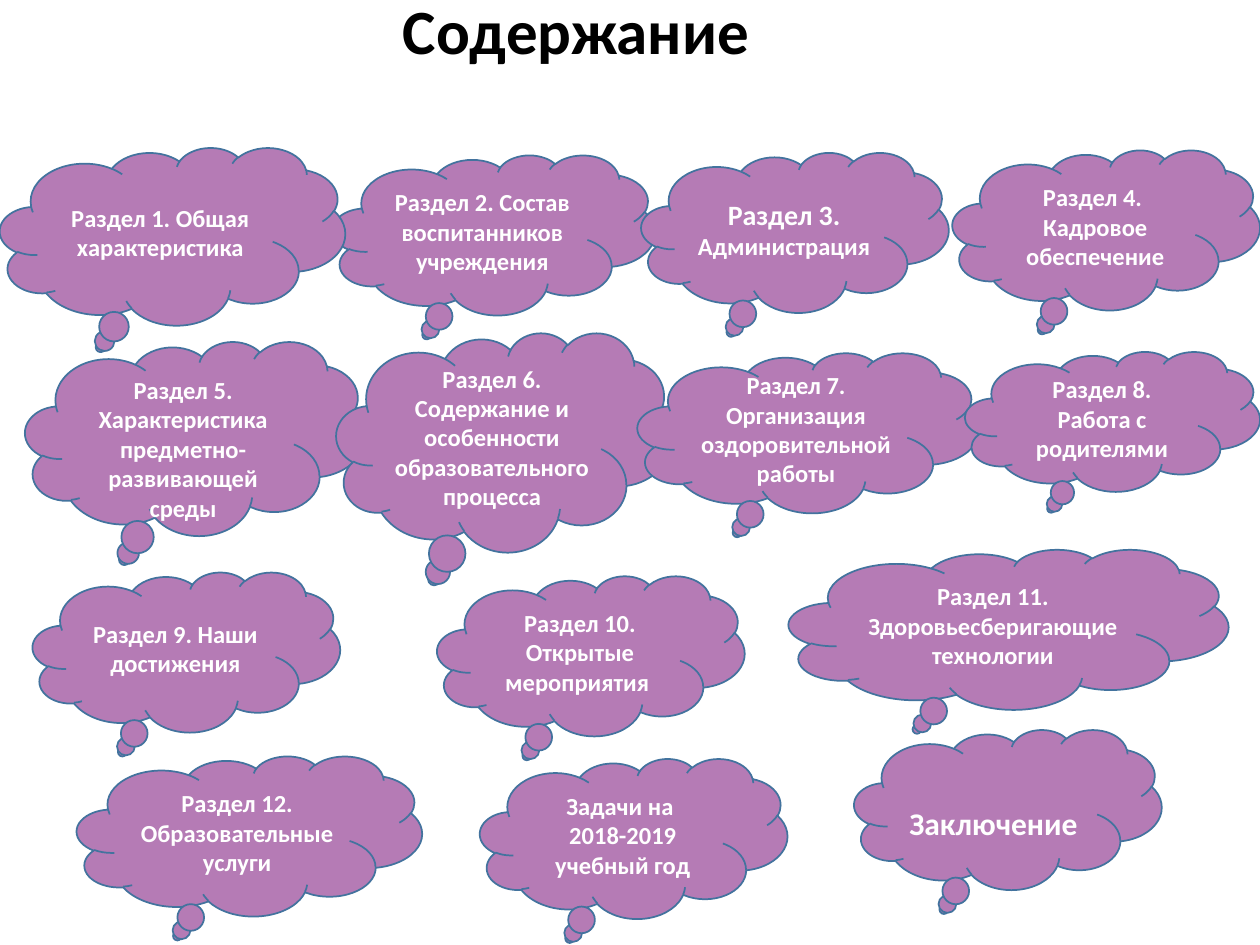
from dataclasses import dataclass

from pptx import Presentation
from pptx.dml.color import RGBColor
from pptx.enum.shapes import MSO_SHAPE
from pptx.enum.text import MSO_ANCHOR, PP_ALIGN
from pptx.util import Inches, Pt


@dataclass(frozen=True)
class Theme:
    font: str = "Calibri"
    cloud: RGBColor = RGBColor(0xB5, 0x7B, 0xB5)
    edge: RGBColor = RGBColor(0x43, 0x73, 0x9E)
    dark: RGBColor = RGBColor(0, 0, 0)
    light: RGBColor = RGBColor(255, 255, 255)
    title: int = 36
    large: int = 18
    medium: int = 16
    body: int = 14


THEME = Theme()


@dataclass(frozen=True)
class Cloud:
    """A thought cloud; lines hold paragraphs, each a list of (text, size) runs."""
    left: float
    top: float
    lines: list
    width: float = 2.44
    height: float = 1.27
    drop: float = 0  # extra inset that lowers the text
    side: float = 0.1  # left and right inset


def plain(*texts: str, size: int = THEME.body) -> list:
    return [[(text, size)] for text in texts]


# Back to front: neighbours overlap.
CLOUDS = [
    Cloud(2.64, 1.23, plain("Раздел 2. Состав воспитанников учреждения"), width=2.56),
    Cloud(0, 1.17, plain("Раздел 1. Общая характеристика"), 2.74, 1.41),
    Cloud(5.09, 1.21, [[("Раздел 3. ", THEME.medium), ("Администрация ", THEME.body)]]),
    Cloud(0.2, 2.71, plain("Раздел 5. Характеристика предметно-развивающей среды"),
          2.7, 1.54, drop=0.23),
    Cloud(6.26, 4.36, plain("Раздел 11. Здоровьесберигающие технологии"), width=3.49),
    Cloud(2.67, 2.64, plain("Раздел 6. Содержание и особенности образовательного процесса"),
          2.66, 1.74, side=0.05),
    Cloud(5.06, 2.8, plain("Раздел 7. Организация оздоровительной работы"), width=2.71),
    Cloud(7.66, 2.79, plain("Раздел 8. Работа с родителями"), 2.34, 1.11),
    Cloud(0.26, 4.54, plain("Раздел 9. Наши достижения")),
    Cloud(3.47, 4.57, plain("Раздел 10. Открытые мероприятия ")),
    Cloud(0.61, 6, plain("Раздел 12. Образовательные услуги"), width=2.74),
    Cloud(7.56, 1.19, plain("Раздел 4. ", "Кадровое обеспечение")),
    Cloud(3.81, 6.02, plain("Задачи на ", "2018-2019 учебный год")),
    Cloud(6.78, 5.79, plain("Заключение ", size=THEME.large), drop=0.27),
]


def write(shape, lines: list, *, color: RGBColor, drop: float = 0,
          lift: float = 0, side: float = 0.1, spacing: float = 1.0) -> None:
    """Fill a shape with centred bold text; drop and lift shift it by insets."""
    frame = shape.text_frame
    frame.word_wrap = True
    frame.vertical_anchor = MSO_ANCHOR.MIDDLE
    frame.margin_left = frame.margin_right = Inches(side)
    frame.margin_top = Inches(0.05 + drop)
    frame.margin_bottom = Inches(0.05 + lift)
    for i, runs in enumerate(lines):
        para = frame.add_paragraph() if i else frame.paragraphs[0]
        para.alignment = PP_ALIGN.CENTER
        para.line_spacing = spacing
        for text, size in runs:
            run = para.add_run()
            run.text = text
            font = run.font
            font.name, font.size, font.bold = THEME.font, Pt(size), True
            font.color.rgb = color


def draw(slide, cloud: Cloud) -> None:
    shape = slide.shapes.add_shape(
        MSO_SHAPE.CLOUD_CALLOUT, Inches(cloud.left), Inches(cloud.top),
        Inches(cloud.width), Inches(cloud.height))
    shape.shadow.inherit = False
    shape.fill.solid()
    shape.fill.fore_color.rgb = THEME.cloud
    shape.line.color.rgb = THEME.edge
    shape.line.width = Pt(1)
    write(shape, cloud.lines, color=THEME.light, drop=cloud.drop, side=cloud.side)


def main() -> None:
    deck = Presentation()
    deck.slide_width, deck.slide_height = Inches(10), Inches(7.5)
    slide = deck.slides.add_slide(deck.slide_layouts[6])
    title = slide.shapes.add_textbox(Inches(0.26), 0, Inches(8.62), Inches(1.15))
    write(title, plain("Содержание", size=THEME.title), color=THEME.dark,
          lift=0.61, spacing=0.9)
    for cloud in CLOUDS:
        draw(slide, cloud)
    deck.save("out.pptx")


if __name__ == "__main__":
    main()
